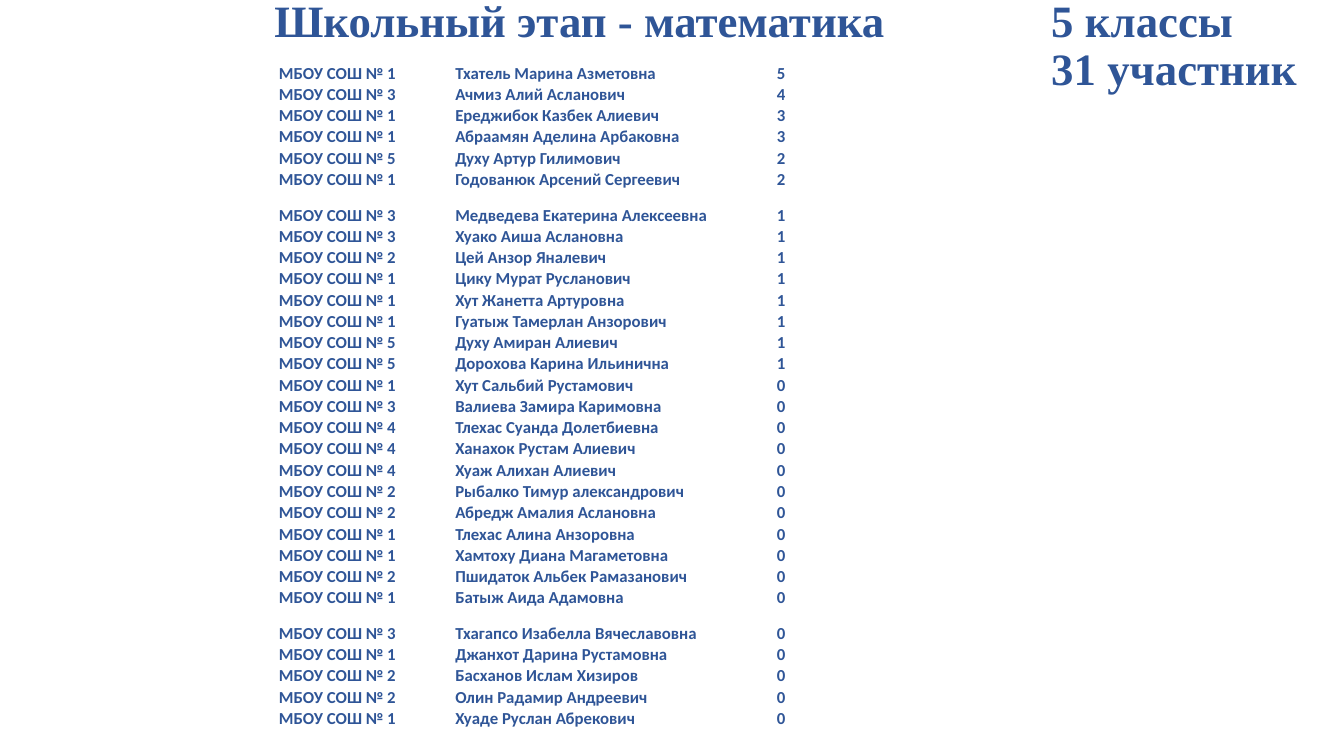
"""Build the results slide of the school maths olympiad for the fifth grades."""
from dataclasses import dataclass

import lxml.etree
import pptx
import pptx.dml.color
import pptx.enum.text
import pptx.oxml.ns
import pptx.util

Pt = pptx.util.Pt
ALIGN = pptx.enum.text.PP_ALIGN
ANCHOR = pptx.enum.text.MSO_ANCHOR

BLUE = "2F5597"
TITLE_FONT = "Times New Roman"
TABLE_FONT = "Calibri"
TITLE_LINES = ["Школьный этап - математика\t5 классы", "\t31 участник"]
TITLE_TAB = 555
COLUMN_WIDTHS = [126, 202.3, 61.9]
COLUMN_ALIGNS = [ALIGN.LEFT, ALIGN.LEFT, ALIGN.CENTER]
ROW_HEIGHT = 15.2
TALL_ROW_HEIGHT = 25.35


@dataclass
class Participant:
    school: int
    name: str
    score: int
    tall: bool = False


PARTICIPANTS = [
    Participant(1, "Тхатель Марина Азметовна", 5),
    Participant(3, "Ачмиз Алий Асланович", 4),
    Participant(1, "Ереджибок Казбек Алиевич", 3),
    Participant(1, "Абраамян Аделина Арбаковна", 3),
    Participant(5, "Духу Артур Гилимович", 2),
    Participant(1, "Годованюк Арсений Сергеевич", 2),
    Participant(3, "Медведева Екатерина Алексеевна", 1, tall=True),
    Participant(3, "Хуако Аиша Аслановна", 1),
    Participant(2, "Цей Анзор Яналевич", 1),
    Participant(1, "Цику Мурат Русланович", 1),
    Participant(1, "Хут Жанетта Артуровна", 1),
    Participant(1, "Гуатыж Тамерлан Анзорович", 1),
    Participant(5, "Духу Амиран Алиевич", 1),
    Participant(5, "Дорохова Карина Ильинична", 1),
    Participant(1, "Хут Сальбий Рустамович", 0),
    Participant(3, "Валиева Замира Каримовна", 0),
    Participant(4, "Тлехас Суанда Долетбиевна", 0),
    Participant(4, "Ханахок Рустам Алиевич", 0),
    Participant(4, "Хуаж Алихан Алиевич", 0),
    Participant(2, "Рыбалко Тимур александрович", 0),
    Participant(2, "Абредж Амалия Аслановна", 0),
    Participant(1, "Тлехас Алина Анзоровна", 0),
    Participant(1, "Хамтоху Диана Магаметовна", 0),
    Participant(2, "Пшидаток Альбек Рамазанович", 0),
    Participant(1, "Батыж Аида Адамовна", 0),
    Participant(3, "Тхагапсо Изабелла Вячеславовна", 0, tall=True),
    Participant(1, "Джанхот Дарина Рустамовна", 0),
    Participant(2, "Басханов Ислам Хизиров", 0),
    Participant(2, "Олин Радамир Андреевич", 0),
    Participant(1, "Хуаде Руслан Абрекович", 0),
]


def color(value: str) -> pptx.dml.color.RGBColor:
    return pptx.dml.color.RGBColor.from_string(value)


def add_run(p, text: str, font: str, size: float) -> None:
    r = p.add_run()
    r.text = text
    r.font.name = font
    r.font.size = Pt(size)
    r.font.bold = True
    r.font.color.rgb = color(BLUE)


def add_tab_stop(p, position: float) -> None:
    qn = pptx.oxml.ns.qn
    tabs = lxml.etree.SubElement(p._p.get_or_add_pPr(), qn("a:tabLst"))
    lxml.etree.SubElement(tabs, qn("a:tab"), pos=str(Pt(position)), algn="l")


def fill_title(sp) -> None:
    sp.left, sp.top, sp.width, sp.height = Pt(117.4), Pt(25.2), Pt(842.4), Pt(37.4)
    tf = sp.text_frame
    tf.word_wrap = True
    tf.auto_size = pptx.enum.text.MSO_AUTO_SIZE.NONE
    tf.vertical_anchor = ANCHOR.MIDDLE
    tf.margin_left, tf.margin_right = Pt(78.5), Pt(0)
    tf.margin_top, tf.margin_bottom = Pt(0), Pt(21)
    for i, line in enumerate(TITLE_LINES):
        p = tf.paragraphs[0] if i == 0 else tf.add_paragraph()
        p.alignment = ALIGN.LEFT
        p.line_spacing = 0.9
        p.space_before = Pt(0)
        add_tab_stop(p, TITLE_TAB)
        add_run(p, line, TITLE_FONT, 32)


def fill_cell(cell, text: str, align: ALIGN) -> None:
    cell.fill.background()
    cell.vertical_anchor = ANCHOR.BOTTOM
    cell.margin_left = cell.margin_right = cell.margin_top = Pt(0.5)
    cell.margin_bottom = Pt(0)
    p = cell.text_frame.paragraphs[0]
    p.alignment = align
    add_run(p, text, TABLE_FONT, 12)


def add_results(s, participants: list[Participant]) -> None:
    heights = [TALL_ROW_HEIGHT if person.tall else ROW_HEIGHT for person in participants]
    table = s.shapes.add_table(
        len(participants), len(COLUMN_WIDTHS),
        Pt(198.7), Pt(44.6), Pt(sum(COLUMN_WIDTHS)), Pt(sum(heights)),
    ).table
    table.first_row = False
    table.horz_banding = False
    for column, width in zip(table.columns, COLUMN_WIDTHS):
        column.width = Pt(width)
    for row, height, person in zip(table.rows, heights, participants):
        row.height = Pt(height)
        texts = [f"МБОУ СОШ № {person.school}", person.name, str(person.score)]
        for cell, text, align in zip(row.cells, texts, COLUMN_ALIGNS):
            fill_cell(cell, text, align)


def main() -> None:
    prs = pptx.Presentation()
    prs.slide_width, prs.slide_height = Pt(960), Pt(540)
    s = prs.slides.add_slide(prs.slide_layouts[5])
    fill_title(s.shapes.title)
    add_results(s, PARTICIPANTS)
    prs.save("out.pptx")


if __name__ == "__main__":
    main()
